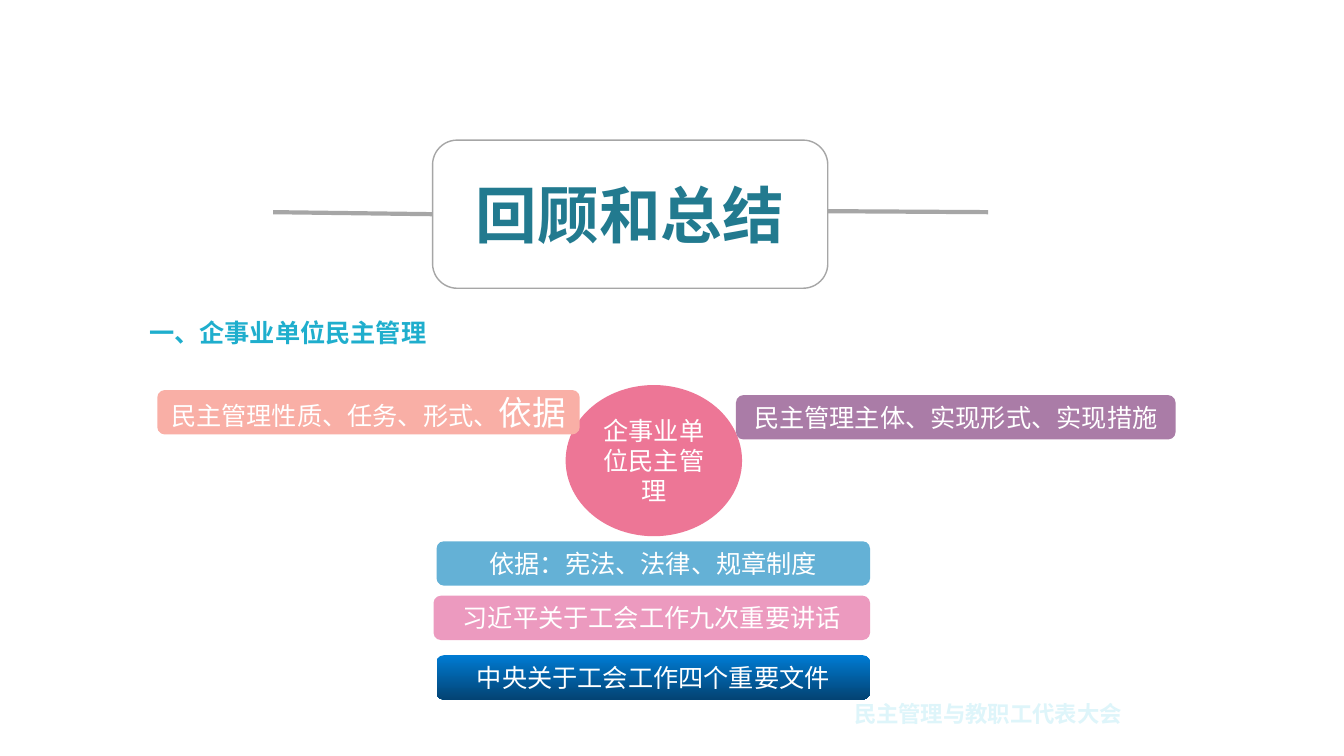
from lxml import etree
from pptx import Presentation
from pptx import util as u
from pptx.dml.color import RGBColor
from pptx.enum import shapes, text
from pptx.oxml.ns import qn

SANS = "Noto Sans CJK SC"
WHITE, GREY = "FFFFFF", "A6A6A6"
LEFT, CENTER = text.PP_ALIGN.LEFT, text.PP_ALIGN.CENTER


def colour(code):
    return RGBColor.from_string(code)


def inches(*lengths):
    return [u.Inches(length) for length in lengths]


def write(shape, spans, code, font="Arial", bold=False, align=CENTER, wrap=True):
    """Fill a shape with one paragraph of (wording, size) spans."""
    frame = shape.text_frame
    frame.word_wrap = wrap
    frame.auto_size = text.MSO_AUTO_SIZE.NONE
    frame.vertical_anchor = text.MSO_ANCHOR.MIDDLE
    para = frame.paragraphs[0]
    para.alignment = align
    for wording, size in spans:
        span = para.add_run()
        span.text = wording
        span.font.size = u.Pt(size)
        span.font.bold = bold
        span.font.color.rgb = colour(code)
        span.font.name = font
        # Chinese glyphs take the East Asian typeface
        east = etree.SubElement(span.font._element, qn("a:ea"))
        east.set("typeface", SANS)


def add_plain(page, kind, box):
    shape = page.shapes.add_shape(kind, *inches(*box))
    shape.shadow.inherit = False
    shape.fill.background()
    shape.line.fill.background()
    return shape


def add_label(page, box, wording, size, code, **style):
    label = page.shapes.add_textbox(*inches(*box))
    write(label, [(wording, size)], code, bold=True, **style)


def add_rule(page, start, end):
    rule = page.shapes.add_connector(
        shapes.MSO_CONNECTOR.STRAIGHT, *inches(*start, *end))
    rule.line.color.rgb = colour(GREY)
    rule.line.width = u.Pt(3)
    etree.SubElement(rule._element.spPr, qn("a:effectLst"))
    return rule


def add_title(page, box):
    """Framed title with a rule on either side."""
    left, top, width, height = box
    right, middle = left + width, top + height / 2
    frame = add_plain(page, shapes.MSO_SHAPE.ROUNDED_RECTANGLE, box)
    frame.line.color.rgb = colour(GREY)
    frame.line.width = u.Pt(1)

    title = page.shapes.title
    title.left, title.top, title.width, title.height = inches(
        left + 0.33, top + 0.29, width - 0.66, height - 0.59)
    write(title, [("回顾和总结", 44)], "227A8F", SANS, True, LEFT, wrap=False)

    left_rule = add_rule(page, (left - 1.58, middle - 0.02), (left, middle))
    left_rule.end_connect(frame, 1)
    add_rule(page, (right, middle - 0.03), (right + 1.59, middle - 0.02))


def add_bar(page, box, spans, *fills):
    """Rounded bar; two fills make a gradient from top to bottom."""
    bar = add_plain(page, shapes.MSO_SHAPE.ROUNDED_RECTANGLE, box)
    if len(fills) == 1:
        bar.fill.solid()
        bar.fill.fore_color.rgb = colour(fills[0])
    else:
        bar.fill.gradient()
        bar.fill.gradient_angle = 270
        for position, (stop, code) in enumerate(zip(bar.fill.gradient_stops, fills)):
            stop.position = position
            stop.color.rgb = colour(code)
    write(bar, spans, WHITE)
    bar.text_frame.margin_left = bar.text_frame.margin_right = u.Inches(0.05)


def add_diagram(page, box):
    """Central topic with a bar on each side and a stack of bars below."""
    left, top, width, _ = box
    bar_height = 0.44
    hub = add_plain(page, shapes.MSO_SHAPE.OVAL, (left + 4.05, top, 1.75, 1.5))
    hub.fill.solid()
    hub.fill.fore_color.rgb = colour("ED7696")
    write(hub, [("企事业单位民主管理", 18)], WHITE, SANS)

    # Side bars
    add_bar(page, (left + width - 4.36, top + 0.1, 4.36, bar_height),
            [("民主管理主体、实现形式、实现措施", 18)], "AA7CA7")
    add_bar(page, (left, top + 0.05, 4.19, bar_height),
            [("民主管理性质、任务、形式、", 18), ("依据", 24)], "F9AFA6")

    # Stack, aligned on its right edge
    stack_right = left + 7.07
    stack = [
        (1.55, 4.3, "依据：宪法、法律、规章制度", ["64B1D6"]),
        (2.09, 4.33, "习近平关于工会工作九次重要讲话", ["EC9ABF"]),
        (2.68, 4.3, "中央关于工会工作四个重要文件", ["007BD3", "034373"]),
    ]
    for drop, length, wording, fills in stack:
        add_bar(page, (stack_right - length, top + drop, length, bar_height),
                [(wording, 18)], *fills)


def main():
    deck = Presentation()
    deck.slide_width, deck.slide_height = inches(13.33, 7.5)
    page = deck.slides.add_slide(deck.slide_layouts[5])
    add_label(page, (8.36, 6.89, 2.88, 0.37), "民主管理与教职工代表大会",
              16, "DEF5FA", wrap=False)
    add_title(page, (4.29, 1.39, 3.92, 1.47))
    add_label(page, (1.38, 3.09, 5.91, 0.42), "一、企事业单位民主管理",
              18, "1FAECD", font=SANS, align=LEFT)
    add_diagram(page, (1.56, 3.82, 10.1, 3.12))
    deck.save("out.pptx")


if __name__ == "__main__":
    main()
